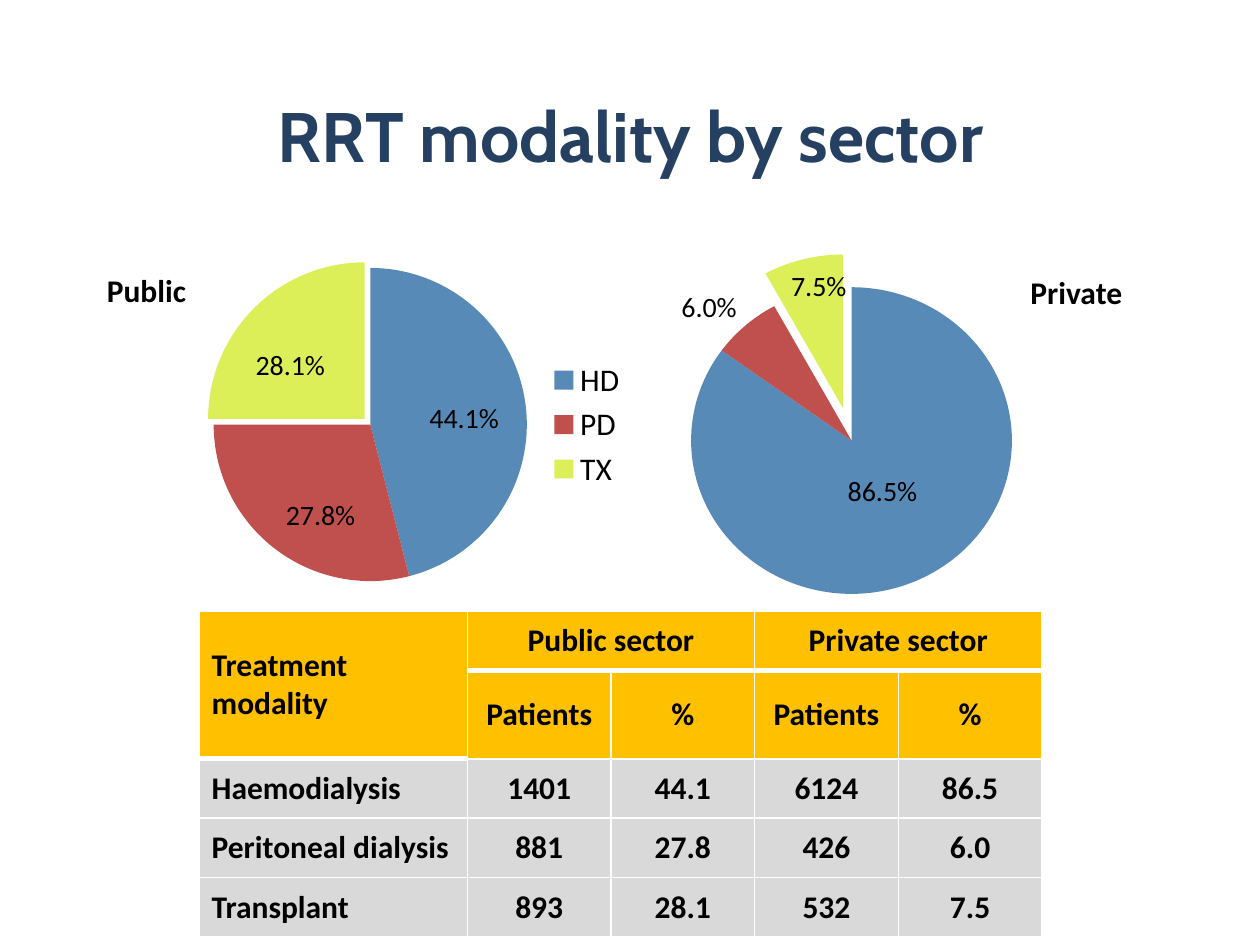
from dataclasses import dataclass

from lxml import etree
from pptx import Presentation
from pptx.chart.data import CategoryChartData
from pptx.dml.color import RGBColor
from pptx.enum.chart import XL_CHART_TYPE, XL_LEGEND_POSITION
from pptx.enum.text import MSO_ANCHOR, MSO_AUTO_SIZE, PP_ALIGN
from pptx.oxml import parse_xml
from pptx.oxml.ns import nsdecls, qn
from pptx.util import Inches, Pt


@dataclass(frozen=True)
class Theme:
    title_font: str = "Cabin"
    body_font: str = "Calibri"
    title: str = "254061"
    ink: str = "000000"
    header: str = "FFC000"
    body: str = "D9D9D9"
    rule: str = "FFFFFF"
    slices: tuple = ("578AB7", "C0504D", "DCEF59")
    title_size: int = 40
    text_size: int = 18
    label_size: int = 16


COLS, ROWS = 100, 75


class SlideBuilder:
    def __init__(self, prs, theme):
        self.theme = theme
        self.s = prs.slides.add_slide(prs.slide_layouts[6])
        self.col = prs.slide_width / COLS
        self.row = prs.slide_height / ROWS

    def box(self, x, y, w, h):
        """Turn grid columns and rows into slide lengths."""
        return (round(x * self.col), round(y * self.row),
                round(w * self.col), round(h * self.row))

    def style(self, font, size, color, bold=False, name=None):
        font.name = name or self.theme.body_font
        font.size = Pt(size)
        font.bold = bold
        font.color.rgb = RGBColor.from_string(color)

    def heading(self, at, text):
        t = self.theme
        tf = self.s.shapes.add_textbox(*self.box(*at)).text_frame
        tf.word_wrap = True
        tf.vertical_anchor = MSO_ANCHOR.MIDDLE
        tf.text = text
        p = tf.paragraphs[0]
        p.alignment = PP_ALIGN.CENTER
        self.style(p.runs[0].font, t.title_size, t.title, True, t.title_font)

    def label(self, at, text, size, bold=False):
        tf = self.s.shapes.add_textbox(*self.box(*at)).text_frame
        tf.word_wrap = False
        tf.auto_size = MSO_AUTO_SIZE.SHAPE_TO_FIT_TEXT
        tf.text = text
        self.style(tf.paragraphs[0].runs[0].font, size, self.theme.ink, bold)

    def pie(self, at, categories, values, plot, explosion, legend=False):
        """Draw a pie whose last slice is pulled out; plot is in shares of the chart."""
        data = CategoryChartData()
        data.categories = categories
        data.add_series("Series 1", values)
        chart = self.s.shapes.add_chart(
            XL_CHART_TYPE.PIE, *self.box(*at), data).chart
        chart.has_title = False
        self.style(chart.font, self.theme.text_size, self.theme.ink)
        chart.has_legend = legend
        if legend:
            chart.legend.position = XL_LEGEND_POSITION.RIGHT
            chart.legend.include_in_layout = False
        series = chart.plots[0].series[0]
        for i, color in enumerate(self.theme.slices):
            fill = series.points[i].format.fill
            fill.solid()
            fill.fore_color.rgb = RGBColor.from_string(color)
        last = series._element.findall(qn("c:dPt"))[-1]
        pull = etree.Element(qn("c:explosion"), val=str(explosion))
        last.find(qn("c:spPr")).addprevious(pull)
        self.place_plot(chart, plot)

    def place_plot(self, chart, plot):
        area = chart._chartSpace.find(f".//{qn('c:plotArea')}")
        for old in area.findall(qn("c:layout")):
            area.remove(old)
        sizes = "".join(f'<c:{tag} val="{v}"/>' for tag, v in zip("xywh", plot))
        area.insert(0, parse_xml(
            f'<c:layout {nsdecls("c")}><c:manualLayout>'
            '<c:layoutTarget val="inner"/><c:xMode val="edge"/>'
            f'<c:yMode val="edge"/>{sizes}</c:manualLayout></c:layout>'))

    def border(self, cell, bottom):
        tc_pr = cell._tc.get_or_add_tcPr()
        for side, width in zip("LRTB", (1, 1, 1, bottom)):
            tc_pr.append(parse_xml(
                f'<a:ln{side} {nsdecls("a")} w="{Pt(width)}"><a:solidFill>'
                f'<a:srgbClr val="{self.theme.rule}"/></a:solidFill></a:ln{side}>'))

    def table(self, at, rows, widths, merges, header_rows):
        t = self.theme
        table = self.s.shapes.add_table(
            len(rows), len(widths), *self.box(*at)).table
        for column, width in zip(table.columns, widths):
            column.width = round(width * self.col)
        for first, last in merges:
            table.cell(*first).merge(table.cell(*last))
        thick = {first for first, _ in merges}
        for i, row in enumerate(rows):
            for j, text in enumerate(row):
                cell = table.cell(i, j)
                self.border(cell, 3 if (i, j) in thick else 1)
                cell.fill.solid()
                cell.fill.fore_color.rgb = RGBColor.from_string(
                    t.header if i < header_rows else t.body)
                cell.vertical_anchor = MSO_ANCHOR.MIDDLE
                cell.text = text
                p = cell.text_frame.paragraphs[0]
                p.alignment = PP_ALIGN.CENTER if j else PP_ALIGN.LEFT
                self.style(p.font, t.text_size, t.ink, True)
                for r in p.runs:
                    self.style(r.font, t.text_size, t.ink, True)


TABLE_ROWS = [
    ("Treatment modality", "Public sector", "", "Private sector", ""),
    ("", "Patients", "%", "Patients", "%"),
    ("Haemodialysis", "1401", "44.1", "6124", "86.5"),
    ("Peritoneal dialysis", "881", "27.8", "426", "6.0"),
    ("Transplant", "893", "28.1", "532", "7.5"),
]
HEADER_MERGES = [((0, 0), (1, 0)), ((0, 1), (0, 2)), ((0, 3), (0, 4))]
SECTOR_LABELS = [("Public", 7.5, 21, 8.3), ("Private", 80.8, 21.2, 9.4)]
SHARE_LABELS = [
    ("28.1%", 19.3, 27.1, 7.6), ("44.1%", 33.1, 31.3, 7.6),
    ("27.8%", 21.7, 39, 7.6), ("7.5%", 61.8, 20.8, 6.5),
    ("86.5%", 66.3, 37.1, 7.6), ("6.0%", 53.1, 22.5, 6.5),
]


def main():
    prs = Presentation()
    prs.slide_width, prs.slide_height = Inches(10), Inches(7.5)
    theme = Theme()
    slide = SlideBuilder(prs, theme)
    slide.heading((10.6, 4.4, 78.9, 12.5), "RRT modality by sector")
    slide.pie((15.4, 11.5, 35.4, 44.4), ("HD", "PD", "TX"), (46, 29, 25),
              plot=(0.04, 0.22, 0.71, 0.56), explosion=5, legend=True)
    slide.table((15.8, 48.5, 66.9, 23.6), TABLE_ROWS, [21.3] + [11.4] * 4,
                HEADER_MERGES, header_rows=2)
    slide.pie((51.6, 20.2, 32.3, 28.3), ("1", "2", "3"), (85, 7, 8),
              plot=(0.1, 0.05, 0.79, 0.9), explosion=22)
    for text, x, y, w in SECTOR_LABELS:
        slide.label((x, y, w, 4), text, theme.text_size, bold=True)
    for text, x, y, w in SHARE_LABELS:
        slide.label((x, y, w, 3.7), text, theme.label_size)
    prs.save("out.pptx")


if __name__ == "__main__":
    main()
